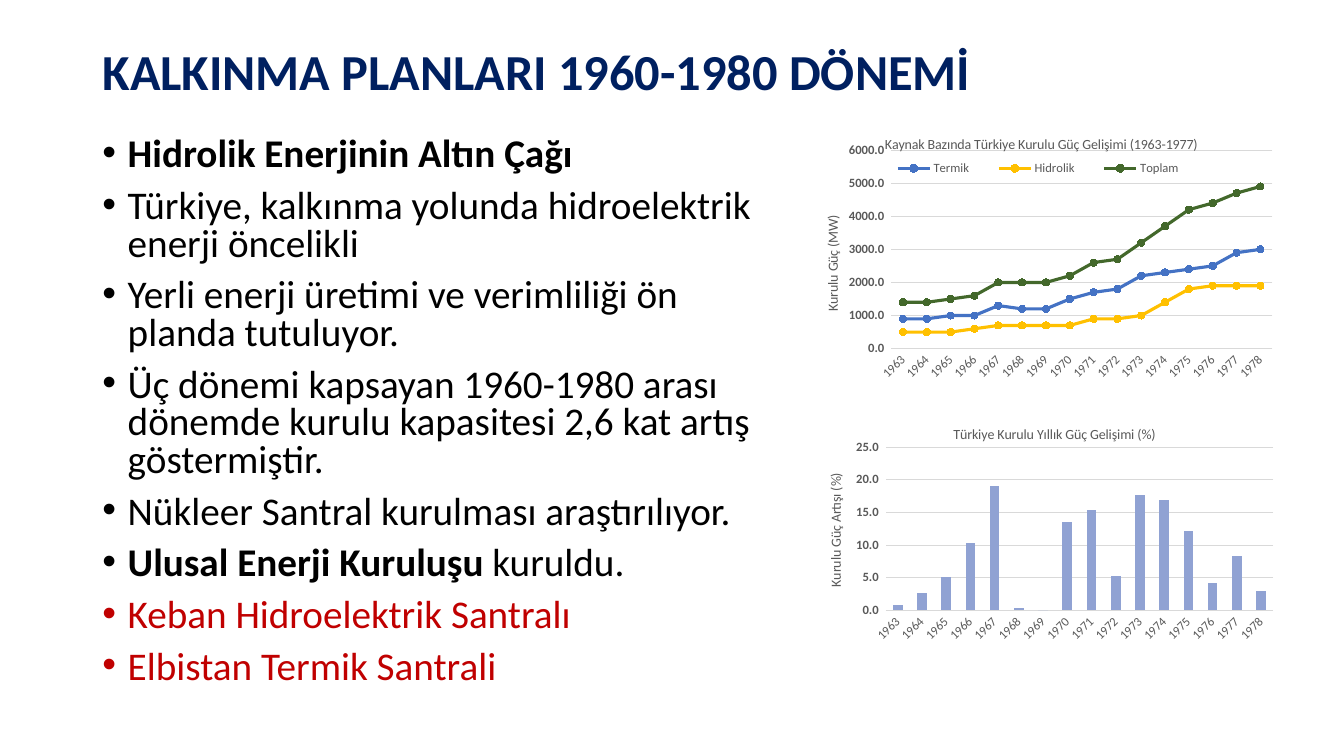
from lxml import etree
from pptx import Presentation
from pptx.chart.data import CategoryChartData
from pptx.dml.color import RGBColor
from pptx.enum.chart import (XL_CHART_TYPE, XL_LEGEND_POSITION,
                             XL_MARKER_STYLE, XL_TICK_MARK)
from pptx.enum.text import MSO_ANCHOR, PP_ALIGN
from pptx.oxml.ns import qn
from pptx.util import Cm, Pt

LINE, COLUMN = XL_CHART_TYPE.LINE_MARKERS, XL_CHART_TYPE.COLUMN_CLUSTERED
RIGHT = XL_LEGEND_POSITION.RIGHT
DOT = XL_MARKER_STYLE.CIRCLE
NO_TICK = XL_TICK_MARK.NONE
LEFT, MIDDLE = PP_ALIGN.LEFT, MSO_ANCHOR.MIDDLE

FACE = "Calibri"
NAVY, BLACK, RED, GREY, PALE = "002060", "000000", "C00000", "595959", "D9D9D9"
YEARS = [str(year) for year in range(1963, 1979)]

# Each bullet is a list of runs: text, bold, colour
BULLETS = [
    [("Hidrolik Enerjinin Altın Çağı", True, BLACK)],
    [("Türkiye, kalkınma yolunda hidroelektrik enerji öncelikli", False, BLACK)],
    [("Yerli enerji üretimi ve verimliliği ön planda tutuluyor.", False, BLACK)],
    [("Üç dönemi kapsayan 1960-1980 arası dönemde kurulu kapasitesi "
      "2,6 kat artış göstermiştir.", False, BLACK)],
    [("Nükleer Santral kurulması araştırılıyor.", False, BLACK)],
    [("Ulusal Enerji Kuruluşu ", True, BLACK), ("kuruldu.", False, BLACK)],
    [("Keban Hidroelektrik Santralı", False, RED)],
    [("Elbistan Termik Santrali", False, RED)],
]

# Series: name, colour, values
POWER = [
    ("Termik", "4472C4", [900, 900, 1000, 1000, 1300, 1200, 1200, 1500,
                          1700, 1800, 2200, 2300, 2400, 2500, 2900, 3000]),
    ("Hidrolik", "FFC000", [500, 500, 500, 600, 700, 700, 700, 700,
                            900, 900, 1000, 1400, 1800, 1900, 1900, 1900]),
    ("Toplam", "43682B", [1400, 1400, 1500, 1600, 2000, 2000, 2000, 2200,
                          2600, 2700, 3200, 3700, 4200, 4400, 4700, 4900]),
]
GROWTH = [
    ("Yıllık artış", "90A2D3", [0.8, 2.7, 5.1, 10.3, 19.1, 0.4, 0, 13.6,
                                15.3, 5.2, 17.7, 16.9, 12.2, 4.2, 8.3, 3]),
]


def rgb(code):
    return RGBColor.from_string(code)


def put(item, **values):
    for name, value in values.items():
        setattr(item, name, value)


def style(font, size, code, bold=False):
    put(font, name=FACE, size=Pt(size), bold=bold)
    font.color.rgb = rgb(code)


def paint(fill, code):
    fill.solid()
    fill.fore_color.rgb = rgb(code)


def stroke(line, code, width):
    line.width = Pt(width)
    line.color.rgb = rgb(code)


def place(node, index, inner=False, **spots):
    """Pin a chart part at fractions of the chart's size."""
    for old in node.findall(qn("c:layout")):
        node.remove(old)
    layout = etree.Element(qn("c:layout"))
    manual = etree.SubElement(layout, qn("c:manualLayout"))
    if inner:
        etree.SubElement(manual, qn("c:layoutTarget")).set("val", "inner")
    for key in ("x", "y"):
        etree.SubElement(manual, qn(f"c:{key}Mode")).set("val", "edge")
    for key, value in spots.items():
        etree.SubElement(manual, qn(f"c:{key}")).set("val", str(value))
    node.insert(index, layout)


def label(title, text, x, y):
    frame = title.text_frame
    frame.text = text
    style(frame.paragraphs[0].runs[0].font, 10, GREY)
    place(title._element, 1, x=x, y=y)
    return frame


def heading(slide, box, text):
    title = slide.shapes.title
    put(title, **box)
    frame = title.text_frame
    put(frame, text=text, vertical_anchor=MIDDLE, word_wrap=True)
    par = frame.paragraphs[0]
    put(par, alignment=LEFT, line_spacing=0.9)
    style(par.runs[0].font, 36, NAVY, True)


def bullets(slide, box, items):
    frame = slide.shapes.add_textbox(*box.values()).text_frame
    frame.word_wrap = True
    for index, runs in enumerate(items):
        par = frame.add_paragraph() if index else frame.paragraphs[0]
        props = par._p.get_or_add_pPr()
        props.set("marL", str(Cm(0.64)))
        props.set("indent", str(-Cm(0.64)))
        etree.SubElement(props, qn("a:buFont")).set("typeface", "Arial")
        etree.SubElement(props, qn("a:buChar")).set("char", "•")
        put(par, line_spacing=0.8, space_before=Pt(10 if index else 0))
        for text, bold, code in runs:
            run = par.add_run()
            run.text = text
            style(run.font, 28, code, bold)


def axes(chart, text, x, y, top, step):
    years, scale = chart.category_axis, chart.value_axis
    for axis in (years, scale):
        put(axis, major_tick_mark=NO_TICK, minor_tick_mark=NO_TICK)
        style(axis.tick_labels.font, 9, GREY, axis is scale)
    stroke(years.format.line, PALE, 0.75)
    years._element.txPr.bodyPr.set("rot", "-2700000")
    put(scale, minimum_scale=0, maximum_scale=top, major_unit=step)
    put(scale.tick_labels, number_format="0.0\\ ", number_format_is_linked=False)
    scale.format.line.fill.background()
    stroke(scale.major_gridlines.format.line, PALE, 0.75)
    frame = label(scale.axis_title, text, x, y)
    frame._txBody.bodyPr.set("rot", "-5400000")
    frame._txBody.bodyPr.set("vert", "horz")


def graph(slide, box, kind, rows, title, spot, plot):
    data = CategoryChartData()
    data.categories = YEARS
    for name, _, values in rows:
        data.add_series(name, values)
    chart = slide.shapes.add_chart(kind, *box.values(), data).chart
    style(chart.font, 10, BLACK)
    put(chart, has_title=True, has_legend=False)
    label(chart.chart_title, title, *spot)
    chart.chart_title.include_in_layout = True
    chart.plots[0].vary_by_categories = False
    area = chart._chartSpace.chart.plotArea
    place(area, 0, inner=True, **plot)
    return chart


def power(slide, box):
    chart = graph(slide, box, LINE, POWER,
                  "Kaynak Bazında Türkiye Kurulu Güç Gelişimi (1963-1977)",
                  (0.19, 0.06), dict(x=0.207, y=0.124, w=0.746, h=0.719))
    axes(chart, "Kurulu Güç (MW)", 0.07, 0.35, 6000, 1000)
    for row, (_, code, _) in zip(chart.plots[0].series, POWER):
        row.smooth = False
        stroke(row.format.line, code, 2.25)
        put(row.marker, style=DOT, size=5)
        paint(row.marker.format.fill, code)
        stroke(row.marker.format.line, code, 0.75)
    chart.has_legend = True
    put(chart.legend, position=RIGHT, include_in_layout=False)
    style(chart.legend.font, 9, GREY)
    place(chart.legend._element, 1, x=0.17, y=0.145, w=0.65, h=0.09)


def growth(slide, box):
    chart = graph(slide, box, COLUMN, GROWTH,
                  "Türkiye Kurulu Yıllık Güç Gelişimi (%)",
                  (0.29, 0.06), dict(x=0.156, y=0.158, w=0.795, h=0.645))
    axes(chart, "Kurulu Güç Artışı (%)", 0.03, 0.25, 25, 5)
    bars = chart.plots[0]
    bars.gap_width = 150
    paint(bars.series[0].format.fill, GROWTH[0][1])


def area(left, top, width, height):
    return dict(left=Cm(left), top=Cm(top), width=Cm(width), height=Cm(height))


def main():
    deck = Presentation()
    put(deck, slide_width=Cm(33.87), slide_height=Cm(19.05))
    slide = deck.slides.add_slide(deck.slide_layouts[5])
    heading(slide, area(2.33, 1.02, 29.21, 1.68),
            "KALKINMA PLANLARI 1960-1980 DÖNEMİ")
    bullets(slide, area(2.33, 3.35, 17.48, 14.43), BULLETS)
    power(slide, area(19.79, 2.92, 12.88, 6.96))
    growth(slide, area(20.4, 10.26, 12.29, 6.38))
    deck.save("out.pptx")


if __name__ == "__main__":
    main()
